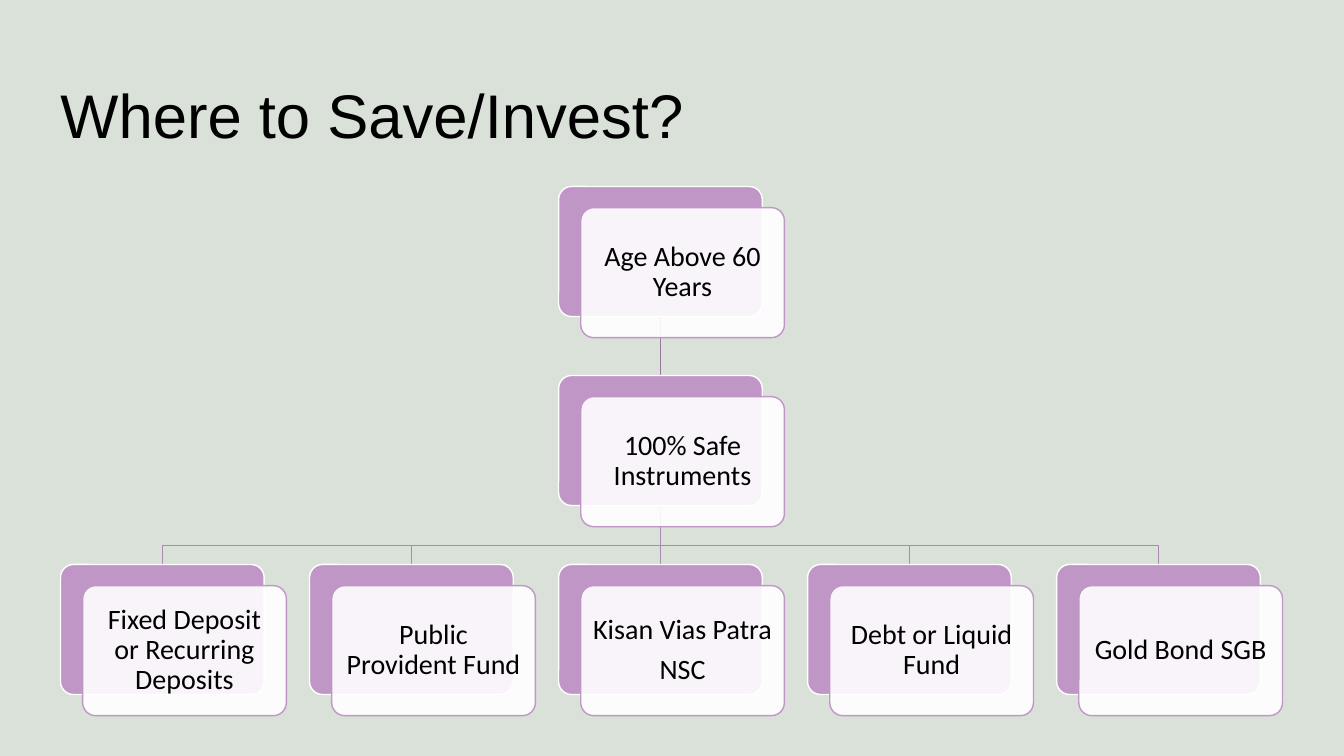
import pptx
import pptx.util
import pptx.dml.color
import pptx.enum.shapes
import pptx.enum.text
import pptx.oxml
import lxml.etree

Inches = pptx.util.Inches
Pt = pptx.util.Pt
RGBColor = pptx.dml.color.RGBColor
MSO_SHAPE = pptx.enum.shapes.MSO_SHAPE

BACKGROUND = RGBColor(0xDA, 0xE1, 0xD9)
BLACK = RGBColor(0, 0, 0)
WHITE = RGBColor(0xFF, 0xFF, 0xFF)
LILAC = RGBColor(0xC0, 0x96, 0xC6)
TRUNK_PURPLE = RGBColor(0x9A, 0x78, 0x9F)
BRANCH_PURPLE = RGBColor(0xAE, 0x88, 0xB4)

LEFT, COLUMN_STEP = 0.6, 2.47
TOP, ROW_STEP = 1.85, 1.875
CARD_WIDTH, CARD_HEIGHT = 2.02, 1.29
OFFSET_X, OFFSET_Y = 0.22, 0.21
BRANCH_Y = 5.41
MIDDLE_COLUMN = 2

CARDS = [
    (2, 0, "Age Above 60 Years"),
    (2, 1, "100% Safe Instruments"),
    (0, 2, "Fixed Deposit or Recurring Deposits"),
    (1, 2, "Public Provident Fund"),
    (2, 2, "Kisan Vias Patra\nNSC"),
    (3, 2, "Debt or Liquid Fund"),
    (4, 2, "Gold Bond SGB"),
]


def add_card(left, top, fill_color, line_color):
    shape = slide.shapes.add_shape(
        MSO_SHAPE.ROUNDED_RECTANGLE,
        Inches(left), Inches(top), Inches(CARD_WIDTH), Inches(CARD_HEIGHT))
    shape.adjustments[0] = 0.1
    shape.shadow.inherit = False
    shape.fill.solid()
    shape.fill.fore_color.rgb = fill_color
    shape.line.color.rgb = line_color
    shape.line.width = Pt(1)
    return shape


presentation = pptx.Presentation()
presentation.slide_width = Inches(13.33)
presentation.slide_height = Inches(7.5)
slide = presentation.slides.add_slide(presentation.slide_layouts[5])
slide.background.fill.solid()
slide.background.fill.fore_color.rgb = BACKGROUND

title = slide.shapes.title
title.left, title.top = Inches(0.5), Inches(0.4)
title.width, title.height = Inches(11.92), Inches(1.45)
title.text_frame.text = "Where to Save/Invest?"
title.text_frame.auto_size = pptx.enum.text.MSO_AUTO_SIZE.NONE
title.text_frame.vertical_anchor = pptx.enum.text.MSO_ANCHOR.MIDDLE
title_paragraph = title.text_frame.paragraphs[0]
title_paragraph.alignment = pptx.enum.text.PP_ALIGN.LEFT
title_paragraph.font.name = "Arial"
title_paragraph.font.size = Pt(44)
title_paragraph.font.color.rgb = BLACK

trunk_x = LEFT + MIDDLE_COLUMN * COLUMN_STEP + CARD_WIDTH / 2
branch_start = TOP + ROW_STEP + CARD_HEIGHT
branch_end = TOP + 2 * ROW_STEP

for column in (4, 3, 1, 0):
    branch_x = LEFT + column * COLUMN_STEP + CARD_WIDTH / 2
    builder = slide.shapes.build_freeform(
        Inches(trunk_x), Inches(branch_start), scale=1.0)
    builder.add_line_segments([
        (Inches(trunk_x), Inches(BRANCH_Y)),
        (Inches(branch_x), Inches(BRANCH_Y)),
        (Inches(branch_x), Inches(branch_end)),
    ], close=False)
    branch = builder.convert_to_shape()
    branch.shadow.inherit = False
    branch.fill.background()
    branch.line.color.rgb = BRANCH_PURPLE
    branch.line.width = Pt(1)

trunks = []
for row, color in enumerate((TRUNK_PURPLE, BRANCH_PURPLE)):
    trunk = slide.shapes.add_connector(
        pptx.enum.shapes.MSO_CONNECTOR.STRAIGHT,
        Inches(trunk_x), Inches(TOP + row * ROW_STEP + CARD_HEIGHT),
        Inches(trunk_x), Inches(TOP + (row + 1) * ROW_STEP))
    trunk.line.color.rgb = color
    trunk.line.width = Pt(1)
    lxml.etree.SubElement(
        trunk._element.spPr, pptx.oxml.ns.qn("a:effectLst"))
    trunks.append(trunk)

middle_cards = []
for column, row, label in CARDS:
    left = LEFT + column * COLUMN_STEP
    top = TOP + row * ROW_STEP
    back_card = add_card(left, top, LILAC, WHITE)
    if column == MIDDLE_COLUMN:
        middle_cards.append(back_card)

    front_card = add_card(left + OFFSET_X, top + OFFSET_Y, WHITE, LILAC)
    fill_color = front_card._element.spPr.find(
        pptx.oxml.ns.qn("a:solidFill"))[0]
    lxml.etree.SubElement(
        fill_color, pptx.oxml.ns.qn("a:alpha"), val="90000")
    text_frame = front_card.text_frame
    text_frame.text = label
    text_frame.word_wrap = True
    text_frame.vertical_anchor = pptx.enum.text.MSO_ANCHOR.MIDDLE
    text_frame.margin_left = text_frame.margin_right = Inches(0.08)
    text_frame.margin_top = text_frame.margin_bottom = Inches(0.08)
    for paragraph in text_frame.paragraphs:
        paragraph.alignment = pptx.enum.text.PP_ALIGN.CENTER
        paragraph.line_spacing = 0.9
        paragraph.space_after = Pt(7)
        paragraph.font.name = "Calibri"
        paragraph.font.size = Pt(20)
        paragraph.font.color.rgb = BLACK

for row, trunk in enumerate(trunks):
    trunk.begin_connect(middle_cards[row], 2)
    trunk.end_connect(middle_cards[row + 1], 0)

presentation.save("out.pptx")
